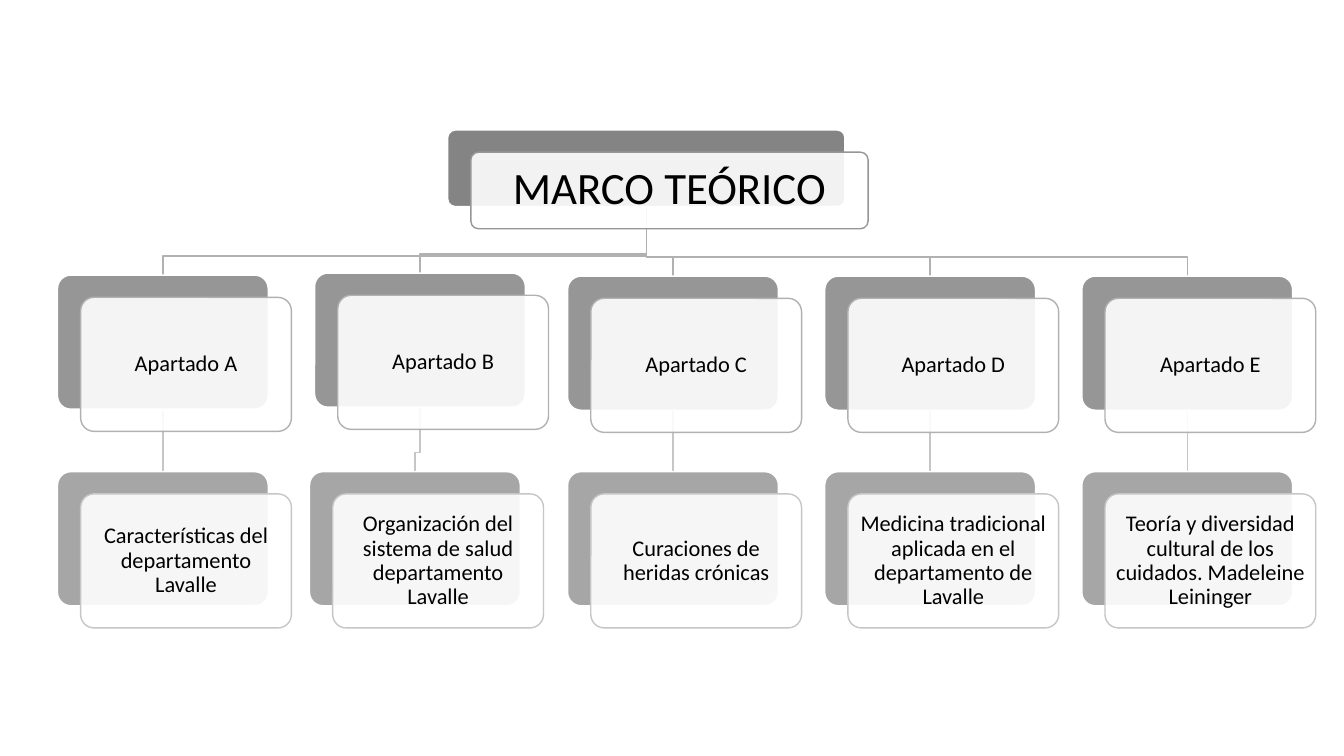
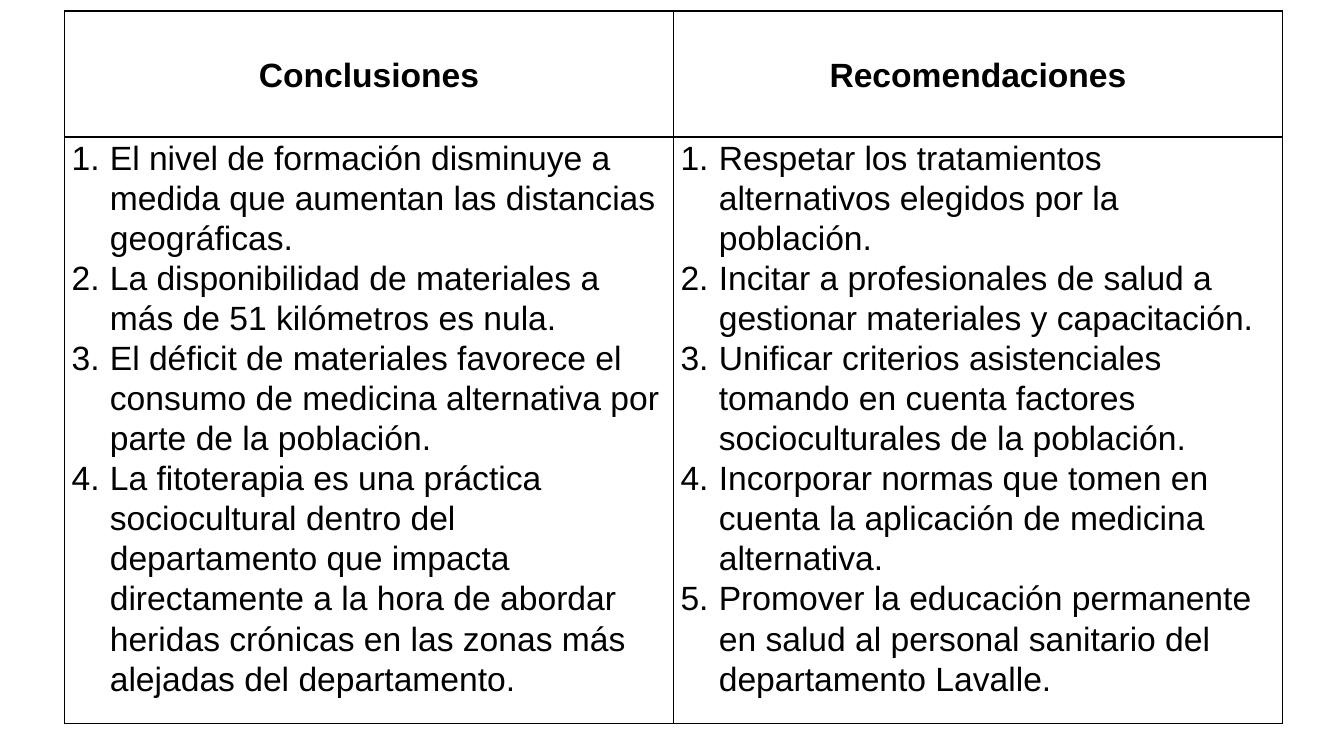
from lxml import etree
from pptx import Presentation
from pptx.dml.color import RGBColor
from pptx.enum import shapes, text
from pptx.oxml.ns import qn
from pptx import util as u

PX = 9144  # EMU; 100 px make an inch
BLACK = RGBColor(0x00, 0x00, 0x00)
WHITE = RGBColor(0xFF, 0xFF, 0xFF)
# Fill of the back plate and outline of the front plate, by level
ROOT = RGBColor(0x84, 0x84, 0x84), RGBColor(0x96, 0x96, 0x96)
PART = RGBColor(0x96, 0x96, 0x96), RGBColor(0xB1, 0xB1, 0xB1)
LEAF = RGBColor(0xA6, 0xA6, 0xA6), RGBColor(0xC6, 0xC6, 0xC6)

CARD_W, CARD_H = 209, 133
SHIFT_X, SHIFT_Y = 23, 22
LEAF_Y = 468
BEND = 19
NUM_IN = 38

# Part: left, top, title; leaf: left, text
BRANCHES = [
    (57, 273, "Apartado A", 57, "Características del departamento Lavalle"),
    (312, 271, "Apartado B", 307,
     "Organización del sistema de salud departamento Lavalle"),
    (563, 274, "Apartado C", 563, "Curaciones de heridas crónicas"),
    (818, 274, "Apartado D", 818,
     "Medicina tradicional aplicada en el departamento de Lavalle"),
    (1073, 274, "Apartado E", 1073,
     "Teoría y diversidad cultural de los cuidados. Madeleine Leininger"),
]

COLUMNS = [
    ("Conclusiones", [
        "El nivel de formación disminuye a medida que aumentan las distancias "
        "geográficas.",
        "La disponibilidad de materiales a más de 51 kilómetros es nula.",
        "El déficit de materiales favorece el consumo de medicina alternativa "
        "por parte de la población.",
        "La fitoterapia es una práctica sociocultural dentro del departamento "
        "que impacta directamente a la hora de abordar heridas crónicas en las "
        "zonas más alejadas del departamento.",
    ]),
    ("Recomendaciones", [
        "Respetar los tratamientos alternativos elegidos por la población.",
        "Incitar a profesionales de salud a gestionar materiales y capacitación.",
        "Unificar criterios asistenciales tomando en cuenta factores "
        "socioculturales de la población.",
        "Incorporar normas que tomen en cuenta la aplicación de medicina "
        "alternativa.",
        "Promover la educación permanente en salud al personal sanitario del "
        "departamento Lavalle.",
    ]),
]


def px(*vals):
    return [u.Emu(val * PX) for val in vals]


def write(frame, lines, size=16, font="Calibri", bold=False, center=True,
          space=0.9, numbered=False):
    for i, line in enumerate(lines):
        para = frame.paragraphs[0] if i == 0 else frame.add_paragraph()
        para.alignment = text.PP_ALIGN.CENTER if center else text.PP_ALIGN.LEFT
        para.line_spacing = space
        run = para.add_run()
        run.text = line
        run.font.size = u.Pt(size)
        run.font.name = font
        run.font.bold = bold
        run.font.color.rgb = BLACK
        if numbered:
            number(para)


def number(para):
    props = para._p.get_or_add_pPr()
    props.set("marL", str(NUM_IN * PX))
    props.set("indent", str(-NUM_IN * PX))
    etree.SubElement(props, qn("a:buAutoNum"), type="arabicPeriod")


def pad(box, side, ends, anchor=text.MSO_ANCHOR.MIDDLE):
    """Set the margins and anchor of a text frame or a table cell."""
    box.margin_left, box.margin_right = px(side, side)
    box.margin_top, box.margin_bottom = px(ends, ends)
    box.vertical_anchor = anchor


def plate(slide, x, y, w, h, fill, line):
    shape = slide.shapes.add_shape(
        shapes.MSO_SHAPE.ROUNDED_RECTANGLE, *px(x, y, w, h))
    shape.adjustments[0] = 0.1
    shape.shadow.inherit = False
    shape.fill.solid()
    shape.fill.fore_color.rgb = fill
    shape.line.color.rgb = line
    shape.line.width = u.Pt(1)
    return shape


def card(slide, x, y, label, tones, w=CARD_W, h=CARD_H, size=16, inset=7):
    """Draw a grey plate under a see-through one with text; return the grey."""
    back = plate(slide, x, y, w, h, tones[0], WHITE)
    front = plate(slide, x + SHIFT_X, y + SHIFT_Y, w, h, WHITE, tones[1])
    color = front.element.spPr.find(qn("a:solidFill"))[0]
    etree.SubElement(color, qn("a:alpha"), val="90000")
    frame = front.text_frame
    frame.word_wrap = True
    pad(frame, inset, inset)
    write(frame, [label], size=size)
    return back


def link(slide, top, low, color):
    """Join two cards behind all plates, with a bend if they are not aligned."""
    x1, y1 = top.left + top.width // 2, top.top + top.height
    x2, y2 = low.left + low.width // 2, low.top
    if x1 == x2:
        line = slide.shapes.add_connector(
            shapes.MSO_CONNECTOR.STRAIGHT, x1, y1, x2, y2)
        line.begin_connect(top, 2)
        line.end_connect(low, 0)
    else:
        mid = y2 - BEND * PX
        pen = slide.shapes.build_freeform(x1, y1)
        pen.add_line_segments([(x1, mid), (x2, mid), (x2, y2)], close=False)
        line = pen.convert_to_shape()
        line.fill.background()
    line.line.color.rgb = color
    line.line.width = u.Pt(1)
    etree.SubElement(line.element.spPr, qn("a:effectLst"))
    line.element.getparent().insert(2, line.element)


def frame_cell(cell):
    props = cell._tc.get_or_add_tcPr()
    for side in ("lnL", "lnR", "lnT", "lnB"):
        edge = etree.SubElement(props, qn("a:" + side), w=str(u.Pt(1)))
        fill = etree.SubElement(edge, qn("a:solidFill"))
        etree.SubElement(fill, qn("a:srgbClr"), val=str(BLACK))
    cell.fill.background()


def draw_tree(slide):
    root = card(slide, 444, 129, "MARCO TEÓRICO", ROOT,
                w=394, h=76, size=32, inset=13)
    for x, y, title, leaf_x, label in BRANCHES:
        part = card(slide, x, y, title, PART)
        leaf = card(slide, leaf_x, LEAF_Y, label, LEAF)
        link(slide, root, part, PART[1])
        link(slide, part, leaf, LEAF[1])


def draw_table(slide):
    table = slide.shapes.add_table(
        2, len(COLUMNS), *px(64, 11, 1208, 707)).table
    table.first_row = table.horz_banding = False
    table.rows[0].height, table.rows[1].height = px(125, 582)
    for i, (title, items) in enumerate(COLUMNS):
        head, body = table.cell(0, i), table.cell(1, i)
        pad(head, 7, 0)
        pad(body, 7, 0, text.MSO_ANCHOR.TOP)
        look = dict(size=24, font="Arial", space=1.07)
        write(head.text_frame, [title], bold=True, **look)
        write(body.text_frame, items, center=False, numbered=True, **look)
        frame_cell(head)
        frame_cell(body)


def main():
    deck = Presentation()
    deck.slide_width, deck.slide_height = px(1333, 750)
    for draw in (draw_tree, draw_table):
        draw(deck.slides.add_slide(deck.slide_layouts[6]))
    deck.save("out.pptx")


if __name__ == "__main__":
    main()
